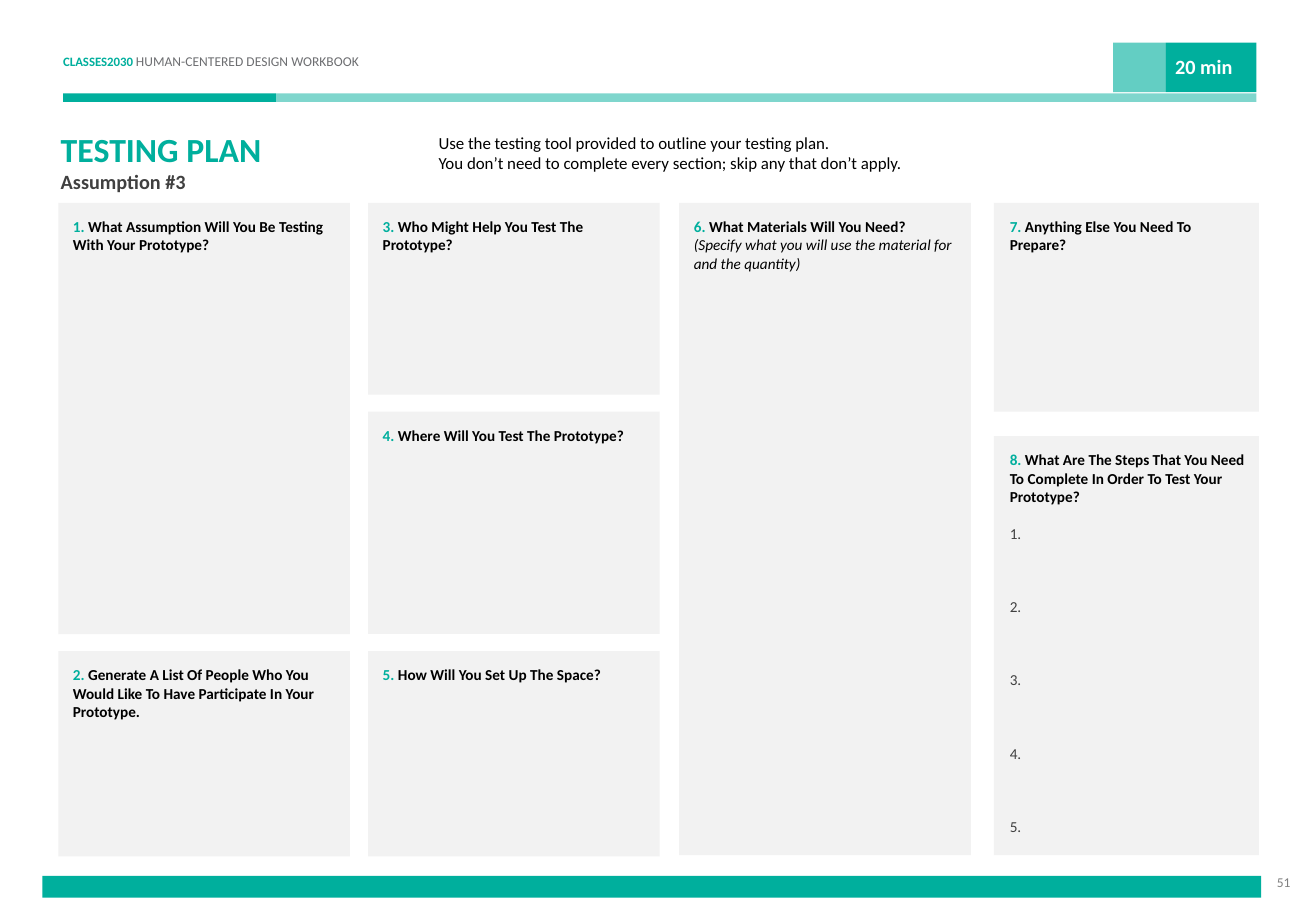
from pptx import Presentation
from pptx.dml.color import RGBColor
from pptx.enum.shapes import MSO_SHAPE
from pptx.enum.text import MSO_ANCHOR, PP_ALIGN
from pptx.oxml.ns import qn
from pptx.util import Pt
from lxml.etree import SubElement

PX = 9144  # EMU; 100 px to the inch
TEAL = RGBColor(0x00, 0xAF, 0x9D)
PANEL = RGBColor(0xF2, 0xF2, 0xF2)
BLACK = RGBColor(0x00, 0x00, 0x00)
WHITE = RGBColor(0xFF, 0xFF, 0xFF)
CHARCOAL = RGBColor(0x40, 0x40, 0x40)
SLATE = RGBColor(0x6D, 0x6E, 0x71)
GRAY = RGBColor(0x80, 0x80, 0x80)
FONT = "Calibri"

PAD, GAP = 12, 14
TOP, BOTTOM = 167, 705
# Column left, width, text inset, then (panel height, number, question, hint)
COLUMNS = [
    (48, 240, PAD, GAP, [
        (355, "1.", "What Assumption Will You Be Testing With Your Prototype?", ""),
        (169, "2.", "Generate A List Of People Who You Would Like To Have "
                    "Participate In Your Prototype.", "")]),
    (303, 240, PAD, GAP, [
        (158, "3.", "Who Might Help You Test The Prototype?", ""),
        (183, "4.", "Where Will You Test The Prototype?", ""),
        (169, "5.", "How Will You Set Up The Space?", "")]),
    (559, 240, PAD, GAP, [
        (537, "6.", "What Materials Will You Need?",
         "(Specify what you will use the material for and the quantity)")]),
    (818, 218, PAD + 1, 20, [
        (172, "7.", "Anything Else You Need To Prepare?", ""),
        (345, "8.", "What Are The Steps That You Need To Complete In Order "
                    "To Test Your Prototype?", "")]),
]
STEPS = 5


def add_rect(s, x, y, w, h, color, alpha=100):
    sp = s.shapes.add_shape(MSO_SHAPE.RECTANGLE, x * PX, y * PX, w * PX, h * PX)
    sp.shadow.inherit = False
    sp.fill.solid()
    sp.fill.fore_color.rgb = color
    sp.line.fill.background()
    if alpha < 100:
        clr = sp.fill._xPr.find(qn("a:solidFill")).find(qn("a:srgbClr"))
        SubElement(clr, qn("a:alpha")).set("val", str(alpha * 1000))
    return sp


def set_frame(sp, left=0, top=0, right=0, bottom=0, anchor=MSO_ANCHOR.TOP):
    tf = sp.text_frame
    tf.word_wrap = True
    tf.vertical_anchor = anchor
    tf.margin_left, tf.margin_top = left * PX, top * PX
    tf.margin_right, tf.margin_bottom = right * PX, bottom * PX
    return tf


def add_textbox(s, x, y, w, h, **frame):
    return set_frame(s.shapes.add_textbox(x * PX, y * PX, w * PX, h * PX), **frame)


def write(p, text, size, color, bold=False, italic=False):
    """Append one formatted run to a left-aligned paragraph."""
    p.alignment = PP_ALIGN.LEFT
    r = p.add_run()
    r.text = text
    r.font.name, r.font.size = FONT, Pt(size)
    r.font.bold, r.font.italic = bold, italic
    r.font.color.rgb = color


def add_header(s, x, y, w):
    accent = 175
    add_rect(s, x, y + 42, accent, 7, TEAL)
    add_rect(s, x + accent, y + 42, w - accent, 7, TEAL, 50)
    p = add_textbox(s, x, y + 7, 303, 15, top=2).paragraphs[0]
    write(p, "CLASSES2030 ", 7.6, TEAL, bold=True)
    write(p, "HUMAN-CENTERED DESIGN WORKBOOK", 8, SLATE)

    badge, tab = 75, 43
    sp = add_rect(s, x + w - badge, y, badge, 41, TEAL)
    write(set_frame(sp, left=8, top=10).paragraphs[0], "20 min", 12, WHITE, bold=True)
    add_rect(s, x + w - badge - tab, y, tab, 41, TEAL, 61)


def add_title(s, x, y):
    tf = add_textbox(s, x, y, 300, 54)
    write(tf.paragraphs[0], "TESTING PLAN", 20, TEAL, bold=True)
    write(tf.add_paragraph(), "Assumption #3", 12, CHARCOAL, bold=True)
    tf = add_textbox(s, x + 311, y - 7, 500, 44, top=10)
    write(tf.paragraphs[0],
          "Use the testing tool provided to outline your testing plan.", 10, BLACK)
    write(tf.add_paragraph(),
          "You don’t need to complete every section; skip any that don’t apply.",
          10, BLACK)


def add_panel(s, x, y, w, h, inset, number, question, hint):
    sp = add_rect(s, x, y, w, h, PANEL)
    tf = set_frame(sp, inset, PAD, PAD, PAD)
    p = tf.paragraphs[0]
    write(p, number + " ", 9, TEAL, bold=True)
    write(p, question, 9, BLACK, bold=True)
    if hint:
        write(tf.add_paragraph(), hint, 9, BLACK, italic=True)
    return tf


def add_steps(tf):
    line = 10.9
    for step in range(1, STEPS + 1):
        p = tf.add_paragraph()
        p.space_before = Pt(line if step == 1 else 3 * line)
        write(p, f"{step}.", 9, CHARCOAL)


def add_board(s):
    for x, w, inset, gap, panels in COLUMNS:
        y = TOP
        for h, *content in panels:
            tf = add_panel(s, x, y, w, h, inset, *content)
            y += h + gap
    add_steps(tf)  # the last panel lists the steps


def add_footer(s, x, y, w):
    add_rect(s, x, y, w, 18, TEAL)
    tf = add_textbox(s, x + w - 7, y - 7, 41, 25, left=10, right=10,
                     anchor=MSO_ANCHOR.MIDDLE)
    p = tf.paragraphs[0]
    write(p, "51", 8, GRAY)
    p.alignment = PP_ALIGN.RIGHT


def main():
    prs = Presentation()
    prs.slide_width, prs.slide_height = 1083 * PX, 750 * PX
    s = prs.slides.add_slide(prs.slide_layouts[6])
    add_header(s, 52, 35, 982)
    add_title(s, 50, 106)
    add_board(s)
    add_footer(s, 35, 721, 1003)
    prs.save("out.pptx")


if __name__ == "__main__":
    main()
